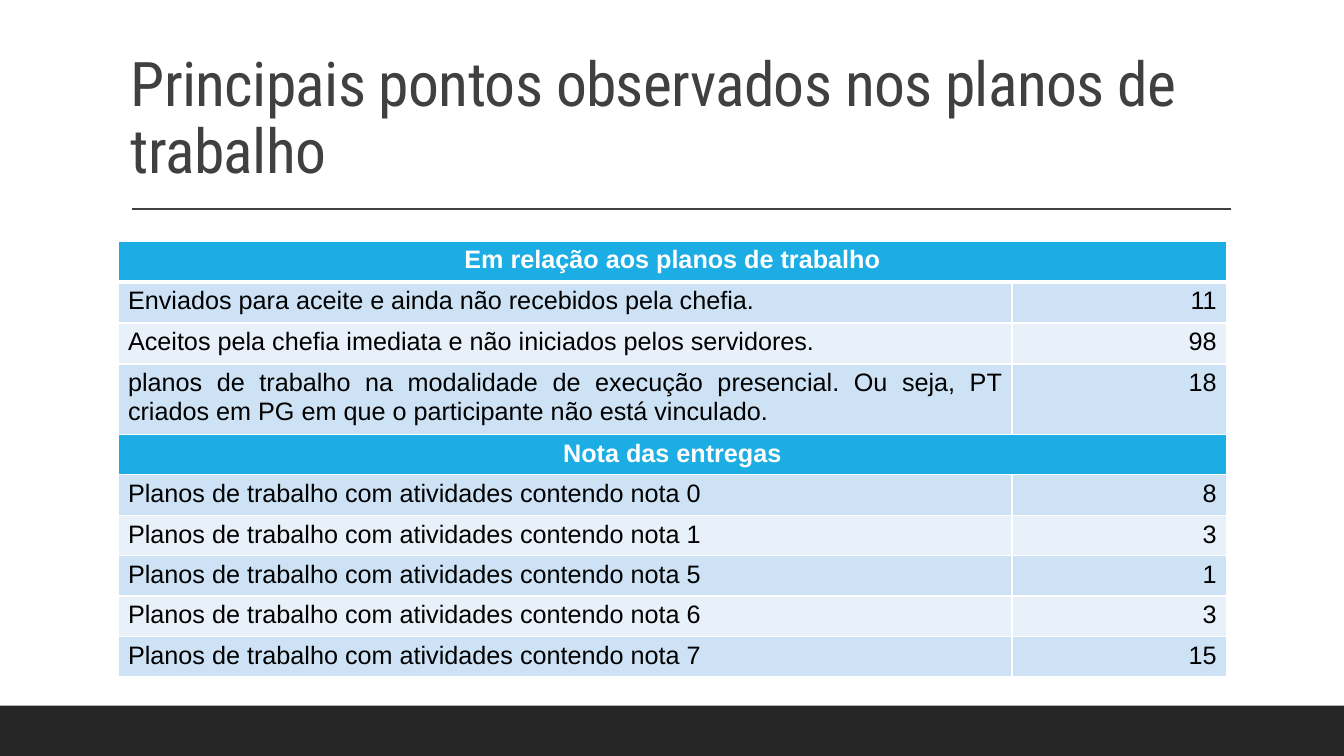
"""Build a slide with a title and a banded table of work plan counts."""
from dataclasses import dataclass
from typing import Optional

from lxml.etree import SubElement
from pptx import Presentation
from pptx.dml.color import RGBColor
from pptx.enum.shapes import MSO_CONNECTOR, MSO_SHAPE
from pptx.enum.text import MSO_ANCHOR, PP_ALIGN
from pptx.oxml.ns import qn
from pptx.util import Inches, Pt


@dataclass(frozen=True)
class Theme:
    head: str = "1CADE4"
    bands: tuple[str, str] = ("CDE3F5", "E8F1FA")
    white: str = "FFFFFF"
    black: str = "000000"
    gray: str = "404040"
    dark: str = "262626"
    title_face: str = "Roboto Condensed"
    face: str = "Arial"
    title_size: float = 44
    size: float = 18
    thin: float = 1
    thick: float = 3


@dataclass(frozen=True)
class Row:
    label: str
    count: Optional[int] = None
    high: float = 3.8
    align: PP_ALIGN = PP_ALIGN.LEFT


THEME = Theme()
COLS, ROWS = 133.33, 75
TALL = 4.07
BOTH = PP_ALIGN.JUSTIFY
PLANS = [
    Row("Em relação aos planos de trabalho", high=TALL),
    Row("Enviados para aceite e ainda não recebidos pela chefia.", 11, TALL, BOTH),
    Row("Aceitos pela chefia imediata e não iniciados pelos servidores.", 98, TALL, BOTH),
    Row("planos de trabalho na modalidade de execução presencial. Ou seja, "
        "PT criados em PG em que o participante não está vinculado.", 18, 6.7, BOTH),
    Row("Nota das entregas"),
    *(Row(f"Planos de trabalho com atividades contendo nota {grade}", count)
      for grade, count in [(0, 8), (1, 3), (5, 1), (6, 3), (7, 15)]),
]


def grid(*units: float) -> list[int]:
    """Turn grid units, ten to the inch, into slide lengths."""
    return [Inches(unit / 10) for unit in units]


def color(code: str) -> RGBColor:
    """Return the colour for a hex code."""
    return RGBColor.from_string(code)


def style(para, face: str, size: float, code: str, bold: bool = False) -> None:
    """Set the font of a paragraph."""
    font = para.font
    font.name, font.size, font.bold = face, Pt(size), bold
    font.color.rgb = color(code)


def add_frame(slide) -> None:
    """Draw the foot bar and the rule under the title."""
    bar = slide.shapes.add_shape(MSO_SHAPE.RECTANGLE, *grid(0, ROWS - 5, COLS, 5))
    bar.shadow.inherit = False
    bar.fill.solid()
    bar.fill.fore_color.rgb = color(THEME.dark)
    bar.line.fill.background()
    rule = slide.shapes.add_connector(
        MSO_CONNECTOR.STRAIGHT, *grid(13.1, 20.75, 122.1, 20.75))
    rule.line.color.rgb = color(THEME.gray)
    rule.line.width = Pt(THEME.thin)
    SubElement(rule._element.spPr, qn("a:effectLst"))


def add_title(slide, text: str) -> None:
    """Write the title."""
    frame = slide.shapes.add_textbox(*grid(12, 3.1, 110, 15.9)).text_frame
    frame.word_wrap = True
    frame.vertical_anchor = MSO_ANCHOR.BOTTOM
    para = frame.paragraphs[0]
    run = para.add_run()
    run.text = text
    run._r.get_or_add_rPr().set("spc", "-50")
    para.line_spacing = 0.9
    style(para, THEME.title_face, THEME.title_size, THEME.gray)


def add_edge(cell, side: str, width: float) -> None:
    """Draw one white edge of a cell."""
    line = SubElement(cell._tc.get_or_add_tcPr(), qn(f"a:ln{side}"), w=str(Pt(width)))
    fill = SubElement(line, qn("a:solidFill"))
    SubElement(fill, qn("a:srgbClr"), val=THEME.white)


def fill_cell(cell, text: str, align: PP_ALIGN, back: str, ink: str, bold: bool) -> None:
    """Write and colour one cell."""
    cell.fill.solid()
    cell.fill.fore_color.rgb = color(back)
    para = cell.text_frame.paragraphs[0]
    para.text = text
    para.alignment = align
    style(para, THEME.face, THEME.size, ink, bold)


def add_table(slide, rows: list[Row]) -> None:
    """Draw the table, with bands that start anew under each heading."""
    high = sum(row.high for row in rows)
    table = slide.shapes.add_table(len(rows), 2, *grid(11.7, 23.9, 110, high)).table
    for col, width in zip(table.columns, grid(88.7, 21.3)):
        col.width = width
    band = 0
    for index, row in enumerate(rows):
        table.rows[index].height = grid(row.high)[0]
        name, count = cells = [table.cell(index, col) for col in range(2)]
        heavy = {0: "B", 1: "T"}.get(index)
        for cell in cells:
            for side in "LRTB":
                add_edge(cell, side, THEME.thick if side == heavy else THEME.thin)
        if row.count is None:
            name.merge(count)
            fill_cell(name, row.label, PP_ALIGN.CENTER, THEME.head, THEME.white, True)
            band = 0
        else:
            back = THEME.bands[band % 2]
            fill_cell(name, row.label, row.align, back, THEME.black, False)
            fill_cell(count, str(row.count), PP_ALIGN.RIGHT, back, THEME.black, False)
            band += 1


def main() -> None:
    """Build and save the slide."""
    deck = Presentation()
    deck.slide_width, deck.slide_height = grid(COLS, ROWS)
    slide = deck.slides.add_slide(deck.slide_layouts[6])
    add_frame(slide)
    add_title(slide, "Principais pontos observados nos planos de trabalho")
    add_table(slide, PLANS)
    deck.save("out.pptx")


if __name__ == "__main__":
    main()
